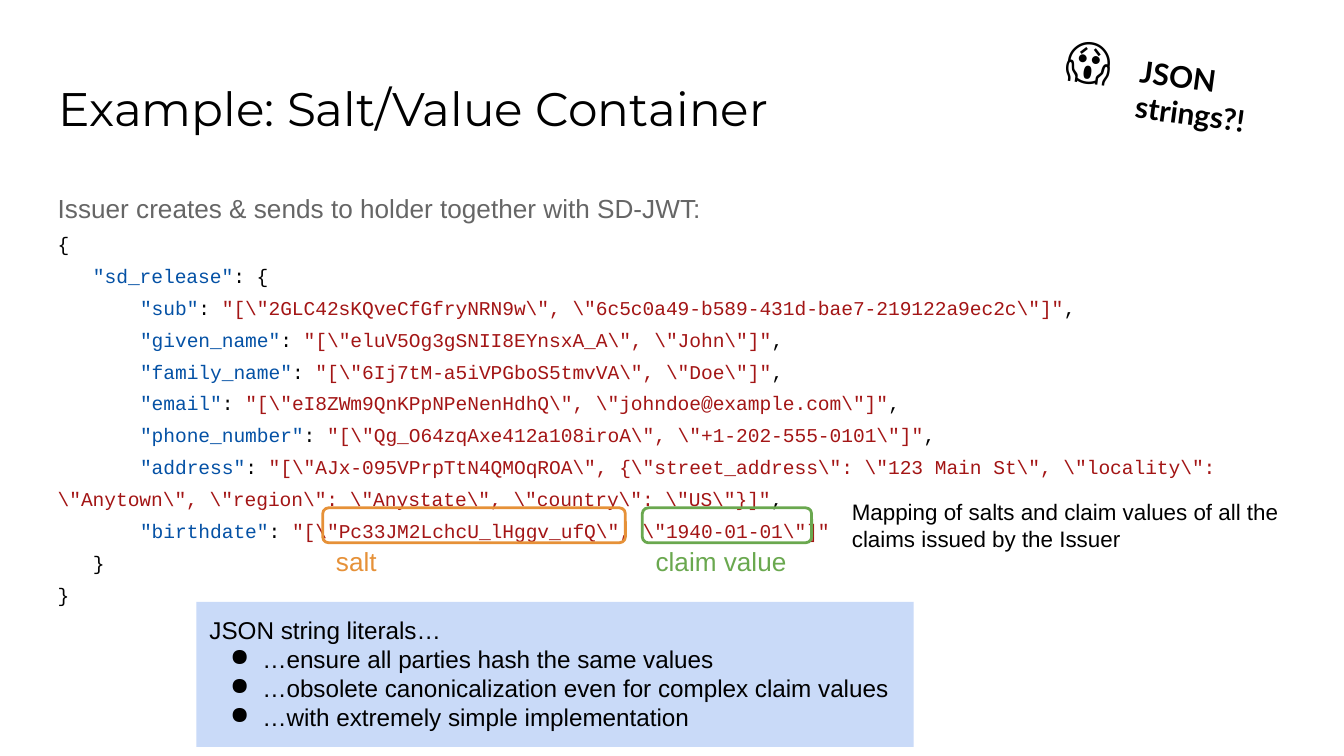
from lxml import etree
from pptx import Presentation
from pptx import util as u
from pptx.dml.color import RGBColor
from pptx.enum import shapes, text
from pptx.oxml import ns

BLACK, GREY, KEY, VALUE = "000000", "666666", "0451A5", "A31515"
ORANGE, GREEN, PALE_BLUE = "E69138", "6AA84F", "C9DAF8"
CHAR = 0.2223  # width in cm of one 10.5 pt code character

CLAIMS = [
    ("sub", r'"[\"2GLC42sKQveCfGfryNRN9w\", \"6c5c0a49-b589-431d-bae7-219122a9ec2c\"]"'),
    ("given_name", r'"[\"eluV5Og3gSNII8EYnsxA_A\", \"John\"]"'),
    ("family_name", r'"[\"6Ij7tM-a5iVPGboS5tmvVA\", \"Doe\"]"'),
    ("email", r'"[\"eI8ZWm9QnKPpNPeNenHdhQ\", \"johndoe@example.com\"]"'),
    ("phone_number", r'"[\"Qg_O64zqAxe412a108iroA\", \"+1-202-555-0101\"]"'),
    ("address", r'"[\"AJx-095VPrpTtN4QMOqROA\", {\"street_address\": \"123 Main St\", '
                r'\"locality\": \"Anytown\", \"region\": \"Anystate\", \"country\": \"US\"}]"'),
    ("birthdate", r'"[\"Pc33JM2LchcU_lHggv_ufQ\", \"1940-01-01\"]"'),
]


def rgb(value):
    return RGBColor.from_string(value)


def add_run(paragraph, words, size=14, color=BLACK, font="Arial", bold=False):
    run = paragraph.add_run()
    run.text = words
    run.font.size = u.Pt(size)
    run.font.name = font
    run.font.bold = bold
    run.font.color.rgb = rgb(color)


def set_paragraph(paragraph, spacing=1.0, margin=0, indent=0, bullet=None):
    paragraph.alignment = text.PP_ALIGN.LEFT
    paragraph.line_spacing = spacing
    paragraph.space_before = u.Pt(0)
    props = paragraph._p.get_or_add_pPr()
    props.set("marL", str(u.Cm(margin)))
    props.set("indent", str(u.Cm(indent)))
    if bullet:
        tint = etree.SubElement(props, ns.qn("a:buClr"))
        etree.SubElement(tint, ns.qn("a:srgbClr"), val=BLACK)
        etree.SubElement(props, ns.qn("a:buChar"), char=bullet)
    else:
        etree.SubElement(props, ns.qn("a:buNone"))


class SlideBuilder:
    """Holds the shared style and the current slide."""

    inset = u.Cm(0.25)

    def __init__(self, slide):
        self.slide = slide

    def frame(self, shape, anchor=text.MSO_ANCHOR.TOP, fit=text.MSO_AUTO_SIZE.NONE):
        body = shape.text_frame
        body.word_wrap = True
        body.auto_size = fit
        body.vertical_anchor = anchor
        body.margin_left = body.margin_right = self.inset
        body.margin_top = body.margin_bottom = self.inset
        return body

    def placeholder(self, index, box, **options):
        holder = self.slide.placeholders[index]
        holder.left, holder.top, holder.width, holder.height = map(u.Cm, box)
        return self.frame(holder, **options)

    def label(self, words, box, rotation=0, **style):
        label = self.slide.shapes.add_textbox(*map(u.Cm, box))
        label.rotation = rotation
        body = self.frame(label, fit=text.MSO_AUTO_SIZE.SHAPE_TO_FIT_TEXT)
        set_paragraph(body.paragraphs[0])
        add_run(body.paragraphs[0], words, **style)

    def panel(self, box, fill):
        panel = self.slide.shapes.add_shape(shapes.MSO_SHAPE.RECTANGLE, *map(u.Cm, box))
        panel.shadow.inherit = False
        panel.fill.solid()
        panel.fill.fore_color.rgb = rgb(fill)
        panel.line.fill.background()
        return self.frame(panel)

    def outline(self, box, color):
        outline = self.slide.shapes.add_shape(
            shapes.MSO_SHAPE.ROUNDED_RECTANGLE, *map(u.Cm, box))
        outline.shadow.inherit = False
        outline.fill.background()
        outline.line.color.rgb = rgb(color)
        outline.line.width = u.Pt(1.5)

    def code_line(self, body, depth, *parts):
        line = body.add_paragraph()
        set_paragraph(line, spacing=1.36, indent=depth * CHAR)
        for words, color in parts:
            add_run(line, words, size=10.5, color=color, font="Courier New")


def main():
    deck = Presentation()
    deck.slide_width, deck.slide_height = u.Cm(25.4), u.Cm(14.29)
    page = SlideBuilder(deck.slides.add_slide(deck.slide_layouts[1]))

    # Title
    title = page.placeholder(0, (0.86, 1.24, 23.67, 1.6), anchor=text.MSO_ANCHOR.MIDDLE)
    set_paragraph(title.paragraphs[0])
    add_run(title.paragraphs[0], "Example: Salt/Value Container", size=25.2, font="Montserrat")

    # Introduction and JSON listing
    listing = page.placeholder(1, (0.84, 3.38, 23.93, 8.26))
    set_paragraph(listing.paragraphs[0])
    add_run(listing.paragraphs[0], "Issuer creates & sends to holder together with SD-JWT:",
            color=GREY)
    page.code_line(listing, 0, ("{", BLACK))
    page.code_line(listing, 3, ('"sd_release"', KEY), (": {", BLACK))
    for name, value in CLAIMS:
        parts = [(f'"{name}"', KEY), (": ", BLACK), (value, VALUE)]
        if name != CLAIMS[-1][0]:
            parts.append((",", BLACK))
        page.code_line(listing, 7, *parts)
    page.code_line(listing, 3, ("}", BLACK))
    page.code_line(listing, 0, ("}", BLACK))

    # Tilted exclamation
    page.label("😱", (19.89, 0.28, 1.63, 1.68), rotation=7.7, size=27)
    page.label("JSON strings?!", (21.29, 0.97, 3.86, 1.19), rotation=7.7,
               size=16, font="Lato", bold=True)

    # Benefits of string literals
    benefits = page.panel((3.71, 11.38, 13.56, 2.74), PALE_BLUE)
    set_paragraph(benefits.paragraphs[0])
    add_run(benefits.paragraphs[0], "JSON string literals…", size=13)
    for benefit in ("…ensure all parties hash the same values",
                    "…obsolete canonicalization even for complex claim values",
                    "…with extremely simple implementation"):
        item = benefits.add_paragraph()
        set_paragraph(item, margin=1, indent=-0.61, bullet="●")
        add_run(item, benefit, size=13)

    # Marked parts of the last claim
    for words, left, label_width, mark_width, color in (
            ("salt", 6.1, 2.03, 5.72, ORANGE),
            ("claim value", 12.14, 3.07, 3.2, GREEN)):
        page.label(words, (left, 10.06, label_width, 1.12), color=color)
        page.outline((left, 9.6, mark_width, 0.66), color)

    # Side note
    page.label("Mapping of salts and claim values of all the claims issued by the Issuer",
               (15.85, 9.17, 8.69, 1.55), size=12)

    deck.save("out.pptx")


if __name__ == "__main__":
    main()
